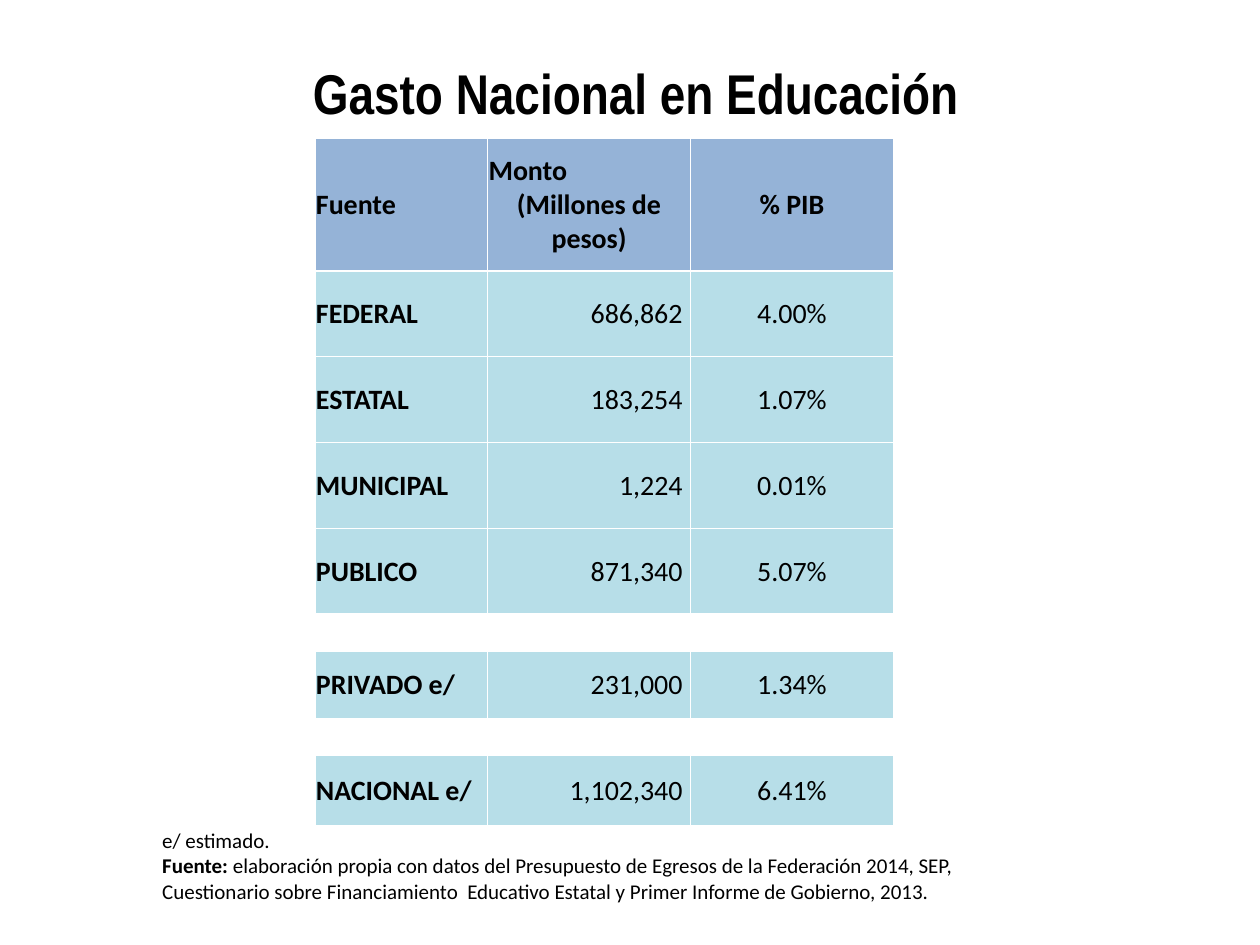
from dataclasses import dataclass

from lxml.etree import SubElement
from pptx import Presentation
from pptx.dml.color import RGBColor as RGB
from pptx.enum.text import MSO_ANCHOR as Anchor, PP_ALIGN as Align
from pptx.oxml.ns import qn
from pptx.util import Cm, Pt

# Content
TITLE = "Gasto Nacional en Educación"
HEADER = ("Fuente", "Monto\n(Millones de pesos)", "% PIB")
GAP = ("", "", "")
ROWS = [
    HEADER,
    ("FEDERAL", "686,862", "4.00%"),
    ("ESTATAL", "183,254", "1.07%"),
    ("MUNICIPAL", "1,224", "0.01%"),
    ("PUBLICO", "871,340", "5.07%"),
    GAP,
    ("PRIVADO e/", "231,000", "1.34%"),
    GAP,
    ("NACIONAL e/", "1,102,340", "6.41%"),
]
FOOTER = [
    [("e/ estimado.", False)],
    [("Fuente: ", True),
     ("elaboración propia con datos del Presupuesto de Egresos de la Federación "
      "2014, SEP, Cuestionario sobre Financiamiento  Educativo Estatal y Primer "
      "Informe de Gobierno, 2013.", False)],
]

# Layout in centimetres: left, top, width, height
TITLE_BOX = (2.26, 0.48, 21.13, 2.74)
FOOTER_BOX = (3.02, 16.56, 17.2, 1.8)
TABLE_AT = (6.35, 2.79)
COL_WIDTHS = (3.48, 4.09, 4.09)
ROW_HEIGHTS = (2.67, *[1.73] * 4, 0.74, 1.37, 0.74, 1.42)
COL_ALIGN = (Align.LEFT, Align.RIGHT, Align.CENTER)
HEADER_ALIGN = ([Align.LEFT], [Align.LEFT, Align.CENTER], [Align.CENTER])
CELL_MARGIN, NUMBER_MARGIN = 0.02, 0.16


@dataclass(frozen=True)
class Theme:
    title_font: str = "Arial Narrow"
    body_font: str = "Calibri"
    title_size: int = 32
    table_size: int = 16
    footer_size: int = 12
    text: str = "000000"
    header: str = "95B3D7"
    body: str = "B7DEE8"
    blank: str = "FFFFFF"
    border: str = "FFFFFF"
    border_width: int = 1


THEME = Theme()


def set_font(font, name, size, bold=None):
    font.name, font.size, font.bold = name, Pt(size), bold
    font.color.rgb = RGB.from_string(THEME.text)


def add_box(slide, box):
    tf = slide.shapes.add_textbox(*map(Cm, box)).text_frame
    tf.word_wrap = True
    return tf


def set_borders(cell):
    """Draw the four sides; lines must come before the fill in tcPr."""
    tc_pr = cell._tc.get_or_add_tcPr()
    for side in ("lnL", "lnR", "lnT", "lnB"):
        ln = SubElement(tc_pr, qn(f"a:{side}"), w=str(Pt(THEME.border_width)))
        fill = SubElement(ln, qn("a:solidFill"))
        SubElement(fill, qn("a:srgbClr"), val=THEME.border)


def fill_cell(cell, text, aligns, bold, color, right_margin):
    set_borders(cell)
    cell.fill.solid()
    cell.fill.fore_color.rgb = RGB.from_string(color)
    cell.vertical_anchor = Anchor.MIDDLE
    cell.margin_left = cell.margin_top = Cm(CELL_MARGIN)
    cell.margin_right, cell.margin_bottom = Cm(right_margin), 0
    tf = cell.text_frame
    tf.text = text
    for p, align in zip(tf.paragraphs, aligns):
        p.alignment = align
        set_font(p.font, THEME.body_font, THEME.table_size, bold)


def add_spending_table(slide):
    size = (sum(COL_WIDTHS), sum(ROW_HEIGHTS))
    table = slide.shapes.add_table(
        len(ROWS), len(HEADER), *map(Cm, TABLE_AT + size)).table
    table.first_row = table.horz_banding = False
    for col, width in zip(table.columns, COL_WIDTHS):
        col.width = Cm(width)
    for r, (row, height) in enumerate(zip(ROWS, ROW_HEIGHTS)):
        table.rows[r].height = Cm(height)
        is_header = row is HEADER
        color = (THEME.header if is_header
                 else THEME.blank if row is GAP else THEME.body)
        for c, text in enumerate(row):
            aligns = HEADER_ALIGN[c] if is_header else [COL_ALIGN[c]]
            is_number = aligns == [Align.RIGHT]
            fill_cell(table.cell(r, c), text, aligns, is_header or c == 0, color,
                      NUMBER_MARGIN if is_number else CELL_MARGIN)


def main():
    prs = Presentation()
    prs.slide_width, prs.slide_height = Cm(25.4), Cm(19.05)
    slide = prs.slides.add_slide(prs.slide_layouts[6])

    # Title
    tf = add_box(slide, TITLE_BOX)
    tf.vertical_anchor = Anchor.MIDDLE
    p = tf.paragraphs[0]
    p.text, p.alignment = TITLE, Align.CENTER
    set_font(p.font, THEME.title_font, THEME.title_size, True)

    # Spending by source
    add_spending_table(slide)

    # Estimate mark and data source
    tf = add_box(slide, FOOTER_BOX)
    for i, runs in enumerate(FOOTER):
        p = tf.add_paragraph() if i else tf.paragraphs[0]
        set_font(p.font, THEME.body_font, THEME.footer_size)
        for text, bold in runs:
            r = p.add_run()
            r.text, r.font.bold = text, bold

    prs.save("out.pptx")


if __name__ == "__main__":
    main()
